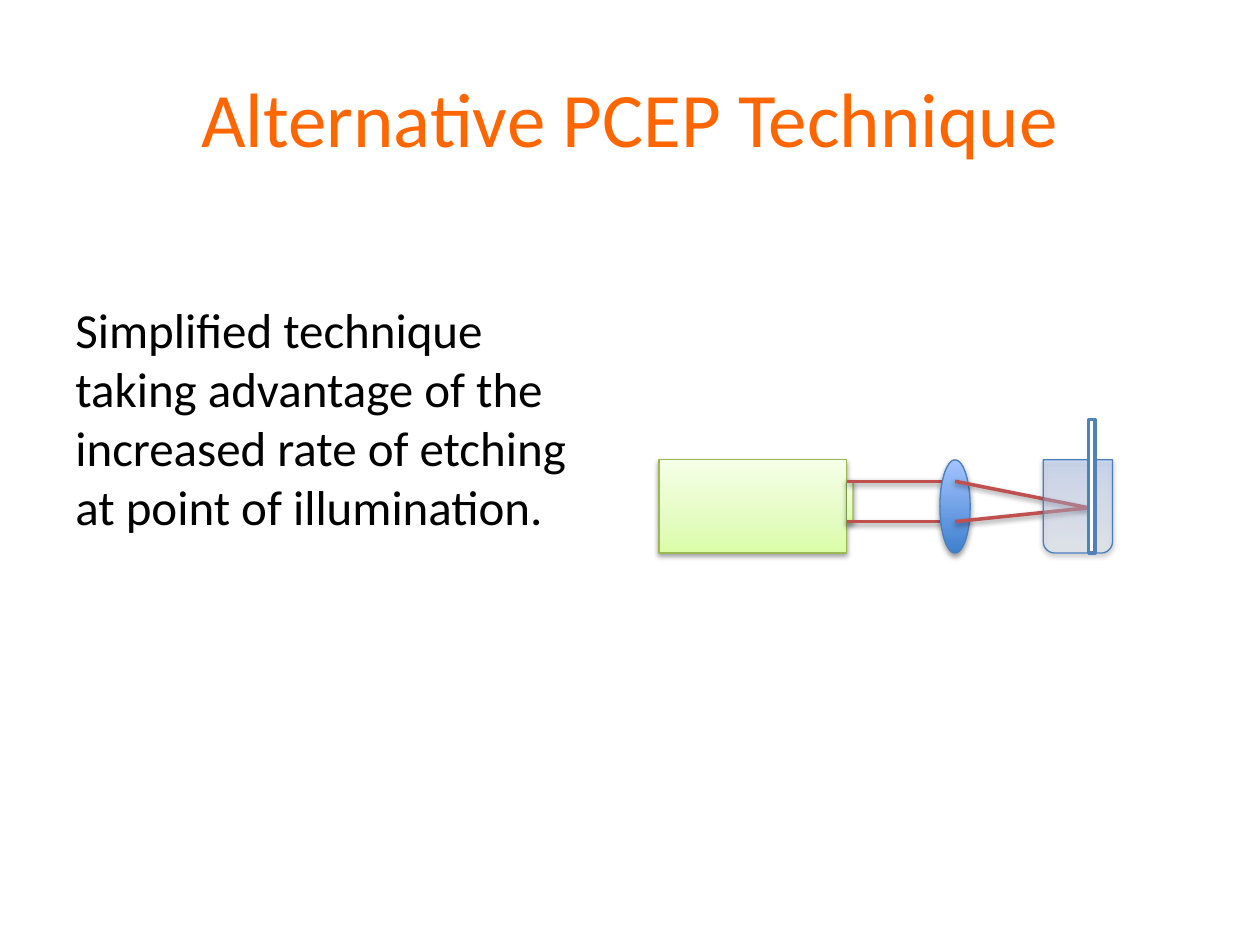
from lxml.etree import SubElement
from pptx import Presentation
from pptx.dml.color import RGBColor
from pptx.enum.shapes import MSO_CONNECTOR, MSO_SHAPE as SHAPE
from pptx.enum.text import MSO_ANCHOR, MSO_AUTO_SIZE, PP_ALIGN
from pptx.oxml.ns import qn
from pptx.util import Inches, Pt

ORANGE = RGBColor(0xFF, 0x66, 0x00)
BLACK = RGBColor(0x00, 0x00, 0x00)
WHITE = RGBColor(0xFF, 0xFF, 0xFF)
RED = RGBColor(0xC0, 0x50, 0x4D)
BLUE = RGBColor(0x4F, 0x81, 0xBD)
DARK_BLUE = RGBColor(0x4B, 0x7E, 0xBC)
GREEN = RGBColor(0x98, 0xB9, 0x55)
GREEN_STOPS = [(0, RGBColor(0xDA, 0xFD, 0xA7)), (35, RGBColor(0xE4, 0xFC, 0xC2)),
               (100, RGBColor(0xF5, 0xFF, 0xE7))]
LENS_STOPS = [(0, RGBColor(0x3F, 0x80, 0xCE)), (100, RGBColor(0xA4, 0xC4, 0xFF))]
BEAKER_STOPS = [(0, RGBColor(0xA4, 0xC4, 0xFF)), (35, RGBColor(0xBF, 0xD4, 0xFF)),
                (100, RGBColor(0xE6, 0xEE, 0xFF))]


def add_color(parent, color, opacity):
    """Append an RGB colour with an opacity in percent."""
    clr = SubElement(parent, qn("a:srgbClr"), val=str(color))
    if opacity < 100:
        SubElement(clr, qn("a:alpha"), val=str(opacity * 1000))


def add_shadow(spPr, opacity=38, dist=1.6):
    """Put a soft downward shadow on a shape or connector."""
    effects = spPr.find(qn("a:effectLst"))
    if effects is None:
        effects = SubElement(spPr, qn("a:effectLst"))
    shadow = SubElement(effects, qn("a:outerShdw"), blurRad=str(Pt(3.1)),
                        dist=str(Pt(dist)), dir="5400000", rotWithShape="0")
    add_color(shadow, BLACK, opacity)


def add_part(slide, kind, box, line, width=0.75):
    """Add an outlined preset shape without a shadow."""
    s = slide.shapes.add_shape(kind, *map(Inches, box))
    s.shadow.inherit = False
    s.line.color.rgb = line
    s.line.width = Pt(width)
    return s


def add_gradient_part(slide, kind, box, line, stops, opacity=100, **shadow):
    """Add a shadowed shape whose gradient runs from bottom to top."""
    s = add_part(slide, kind, box, line)
    s.fill.gradient()
    s.fill.gradient_angle = 90
    gs_list = s._element.spPr.find(".//" + qn("a:gsLst"))
    gs_list.clear()
    for pos, color in stops:
        add_color(SubElement(gs_list, qn("a:gs"), pos=str(pos * 1000)), color, opacity)
    add_shadow(s._element.spPr, **shadow)
    return s


def add_ray(slide, start, end):
    """Add one light ray between two points."""
    c = slide.shapes.add_connector(MSO_CONNECTOR.STRAIGHT, *map(Inches, start + end))
    c.line.color.rgb = RED
    c.line.width = Pt(2)
    add_shadow(c._element.spPr)


def add_text(slide, box, lines, size, color, align=PP_ALIGN.LEFT):
    """Add a text box with one paragraph per line and return its frame."""
    tf = slide.shapes.add_textbox(*map(Inches, box)).text_frame
    for i, line in enumerate(lines):
        p = tf.paragraphs[0] if i == 0 else tf.add_paragraph()
        p.alignment = align
        r = p.add_run()
        r.text = line
        r.font.name = "Calibri"
        r.font.size = Pt(size)
        r.font.color.rgb = color
    return tf


def add_title(slide, box):
    """Add the centred slide title."""
    tf = add_text(slide, box, ["Alternative PCEP Technique"], 44, ORANGE, PP_ALIGN.CENTER)
    tf.word_wrap = True
    tf.vertical_anchor = MSO_ANCHOR.MIDDLE


def add_summary(slide, box):
    """Add the description of the technique."""
    lines = ["Simplified technique", "taking advantage of the",
             "increased rate of etching", "at point of illumination."]
    tf = add_text(slide, box, lines, 28, BLACK)
    tf.word_wrap = False
    tf.auto_size = MSO_AUTO_SIZE.SHAPE_TO_FIT_TEXT


def add_optics(slide, box):
    """Draw the light source, lens, beaker and sample strip in the box."""
    x, y, w, h = box
    height = 0.74
    top, right = y + h - height, x + w
    source_x, lens_x = x + 1.49, x + 2.35
    strip_x = right - 0.19
    focus = (strip_x, top + 0.38)
    ray_ys = (top + 0.17, top + 0.49)

    add_gradient_part(slide, SHAPE.RECTANGLE, (x, top, 1.49, height), GREEN, GREEN_STOPS)
    add_gradient_part(slide, SHAPE.RIGHT_BRACKET, (source_x, ray_ys[0], 0.05, 0.33),
                      GREEN, GREEN_STOPS)
    for ray_y in ray_ys:
        add_ray(slide, (source_x, ray_y), (lens_x, ray_y))
    add_gradient_part(slide, SHAPE.OVAL, (lens_x - 0.12, top, 0.24, height),
                      DARK_BLUE, LENS_STOPS, opacity=100, dist=1.8)
    for ray_y in ray_ys:
        add_ray(slide, (lens_x, ray_y), focus)
    beaker = add_gradient_part(slide, SHAPE.ROUND_2_SAME_RECTANGLE,
                               (right - 0.55, top, 0.55, height),
                               DARK_BLUE, BEAKER_STOPS, opacity=37)
    xfrm = beaker._element.spPr.find(qn("a:xfrm"))
    xfrm.set("flipH", "1")
    xfrm.set("flipV", "1")
    strip = add_part(slide, SHAPE.RECTANGLE, (strip_x, y, 0.05, h), BLUE, 2)
    strip.fill.solid()
    strip.fill.fore_color.rgb = WHITE


def main():
    """Build and save the slide."""
    prs = Presentation()
    prs.slide_width, prs.slide_height = Inches(10), Inches(7.5)
    slide = prs.slides.add_slide(prs.slide_layouts[6])
    add_title(slide, (0.5, 0.3, 9, 1.25))
    add_optics(slide, (5.23, 3.33, 3.6, 1.06))
    add_summary(slide, (0.5, 2.33, 4.14, 1.99))
    prs.save("out.pptx")


if __name__ == "__main__":
    main()
